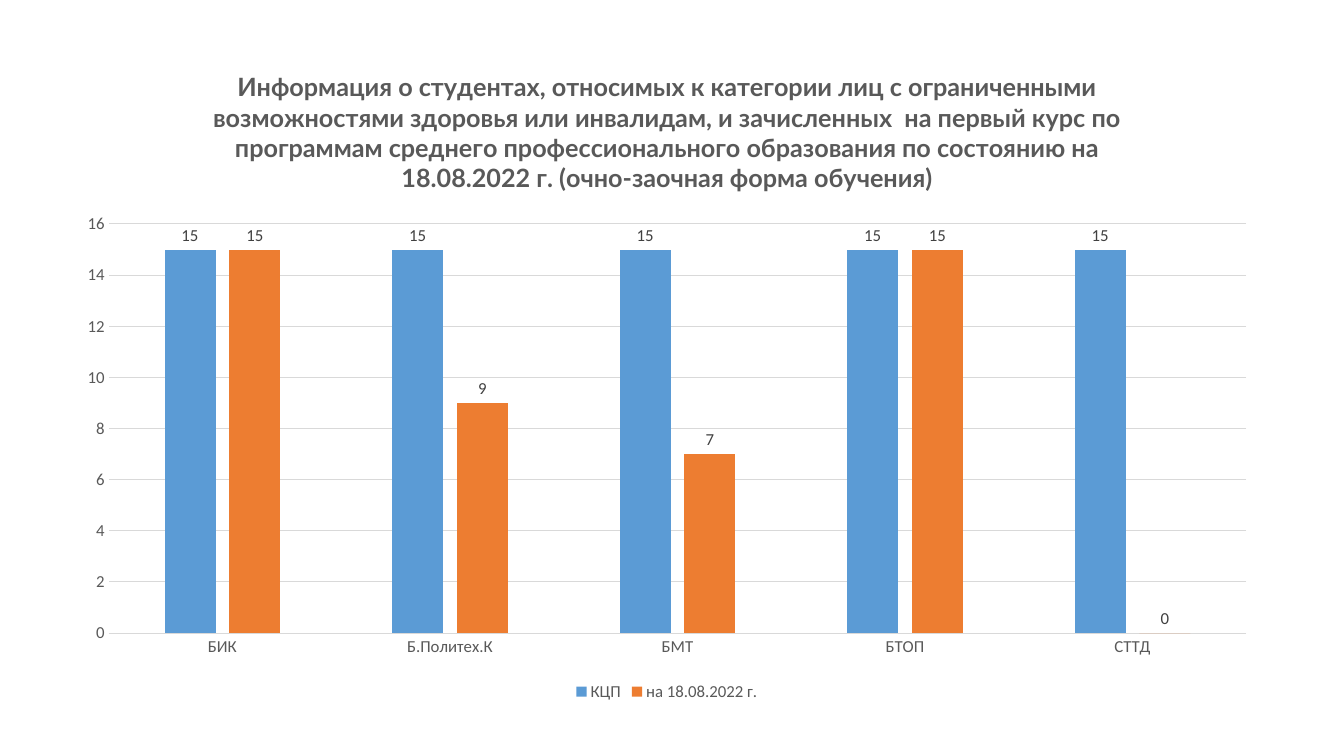
from pptx import Presentation
from pptx.chart.data import CategoryChartData
from pptx.dml.color import RGBColor
from pptx.enum.chart import XL_CHART_TYPE as ChartType
from pptx.enum.chart import XL_LABEL_POSITION as LabelPosition
from pptx.enum.chart import XL_LEGEND_POSITION as LegendPosition
from pptx.enum.chart import XL_TICK_MARK as TickMark
from pptx.util import Inches, Pt

TITLE = (
    "Информация о студентах, относимых к категории лиц с ограниченными "
    "возможностями здоровья или инвалидам, и зачисленных  на первый курс по "
    "программам среднего профессионального образования по состоянию на "
    "18.08.2022 г. (очно-заочная форма обучения)"
)
COLLEGES = ["БИК", "Б.Политех.К", "БМТ", "БТОП", "СТТД"]
SERIES = [
    ("КЦП", [15, 15, 15, 15, 15], "5B9BD5"),
    ("на 18.08.2022 г.", [15, 9, 7, 15, 0], "ED7D31"),
]
CHART_AREA = (0.63, 0.45, 11.97, 6.55)
GRAY, LABEL_GRAY, GRID_GRAY = "595959", "404040", "D9D9D9"
TITLE_FONT = {"name": "Lato", "size": Pt(18), "bold": True}
TEXT_FONT = {"name": "Calibri", "size": Pt(12), "bold": False}
VALUE_SCALE = {"minimum_scale": 0, "maximum_scale": 16, "major_unit": 2}
BAR_SPACING = {"gap_width": 219, "overlap": -27, "vary_by_categories": False}
LABELS = {"show_value": True, "position": LabelPosition.OUTSIDE_END}
LEGEND = {"position": LegendPosition.BOTTOM, "include_in_layout": False}
NO_TICKS = {"major_tick_mark": TickMark.NONE, "minor_tick_mark": TickMark.NONE}


def rgb(code):
    return RGBColor.from_string(code)


def apply(target, values):
    for name, value in values.items():
        setattr(target, name, value)


def style_font(font, values, color):
    apply(font, values)
    font.color.rgb = rgb(color)


def style_line(line):
    line.color.rgb = rgb(GRID_GRAY)
    line.width = Pt(0.75)


def add_title(chart):
    chart.has_title = True
    chart.chart_title.include_in_layout = False
    para = chart.chart_title.text_frame.paragraphs[0]
    span = para.add_run()
    span.text = TITLE
    for font in (para.font, span.font):
        style_font(font, TITLE_FONT, GRAY)


def style_axes(chart):
    for axis in (chart.category_axis, chart.value_axis):
        apply(axis, NO_TICKS)
        style_font(axis.tick_labels.font, TEXT_FONT, GRAY)
    style_line(chart.category_axis.format.line)
    apply(chart.value_axis, VALUE_SCALE)
    chart.value_axis.format.line.fill.background()
    style_line(chart.value_axis.major_gridlines.format.line)


def style_bars(plot):
    apply(plot, BAR_SPACING)
    for bars, (_, _, color) in zip(plot.series, SERIES):
        bars.format.fill.solid()
        bars.format.fill.fore_color.rgb = rgb(color)
        bars.invert_if_negative = False
        apply(bars.data_labels, LABELS)
        style_font(bars.data_labels.font, TEXT_FONT, LABEL_GRAY)


def add_enrolment_chart(page):
    data = CategoryChartData()
    data.categories = COLLEGES
    for name, values, _ in SERIES:
        data.add_series(name, values)
    area = [Inches(length) for length in CHART_AREA]
    chart = page.shapes.add_chart(ChartType.COLUMN_CLUSTERED, *area, data).chart
    style_font(chart.font, TEXT_FONT, GRAY)
    add_title(chart)
    style_axes(chart)
    style_bars(chart.plots[0])
    chart.has_legend = True
    apply(chart.legend, LEGEND)
    style_font(chart.legend.font, TEXT_FONT, GRAY)


def main():
    deck = Presentation()
    deck.slide_width, deck.slide_height = Inches(13.33), Inches(7.5)
    page = deck.slides.add_slide(deck.slide_layouts[6])
    add_enrolment_chart(page)
    deck.save("out.pptx")


if __name__ == "__main__":
    main()
